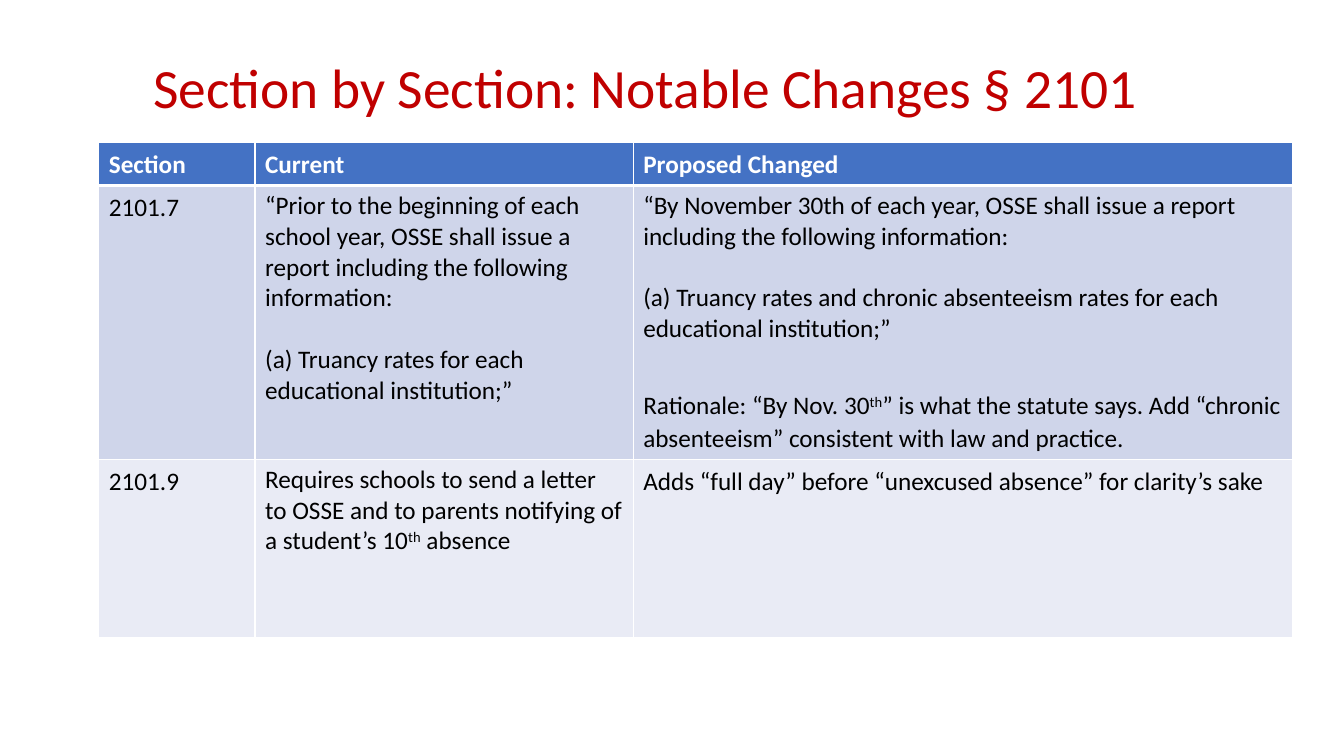
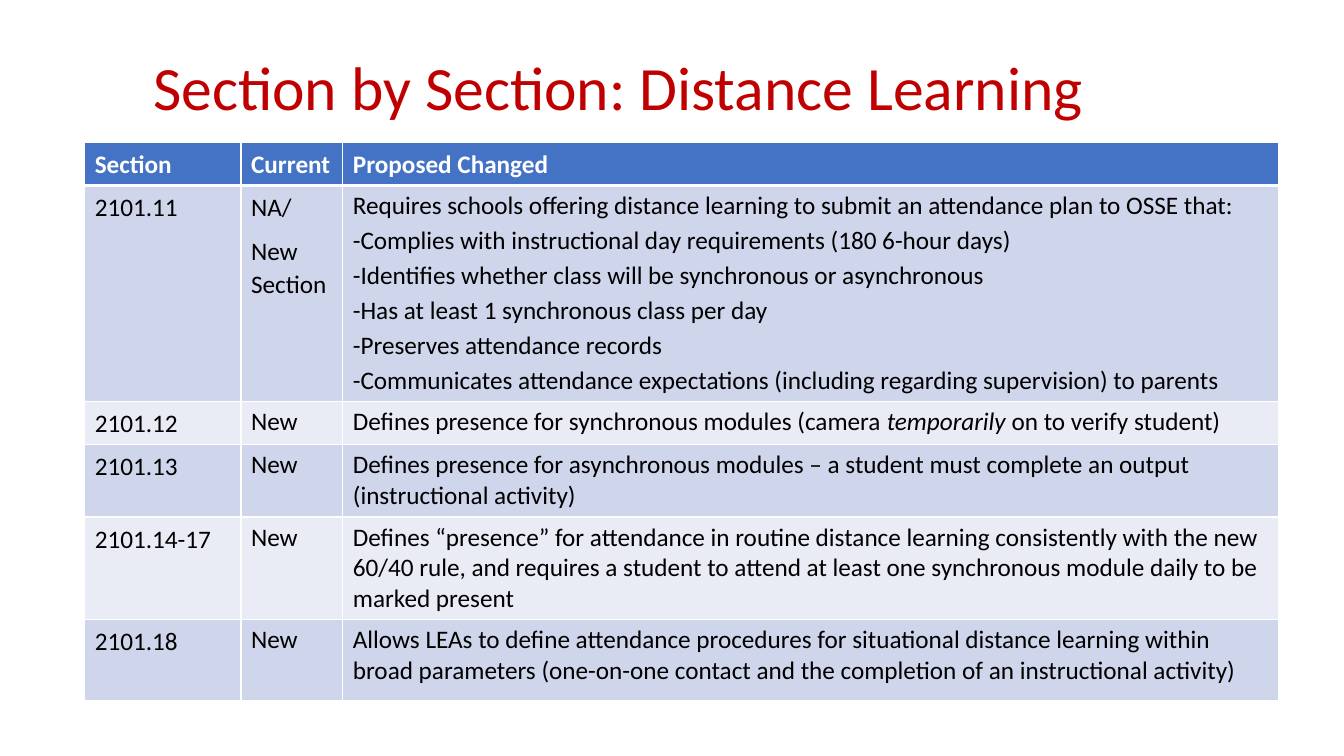
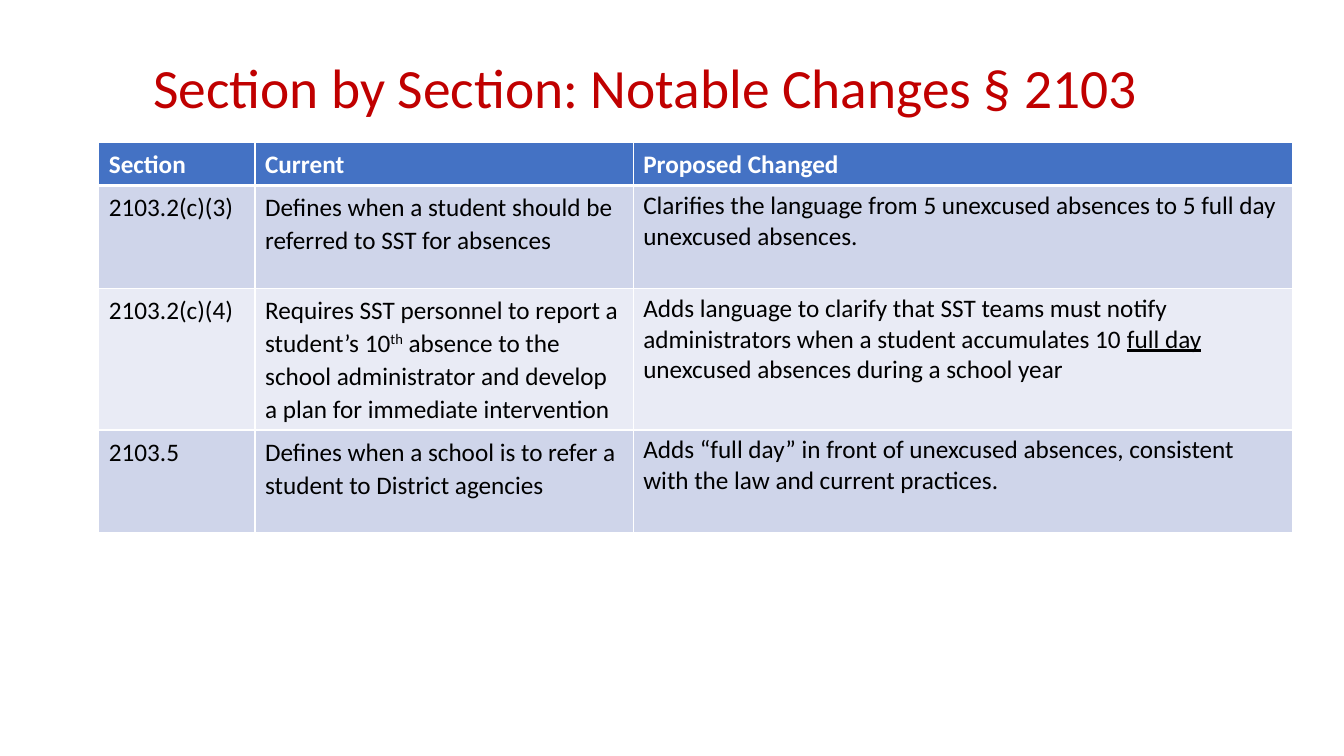
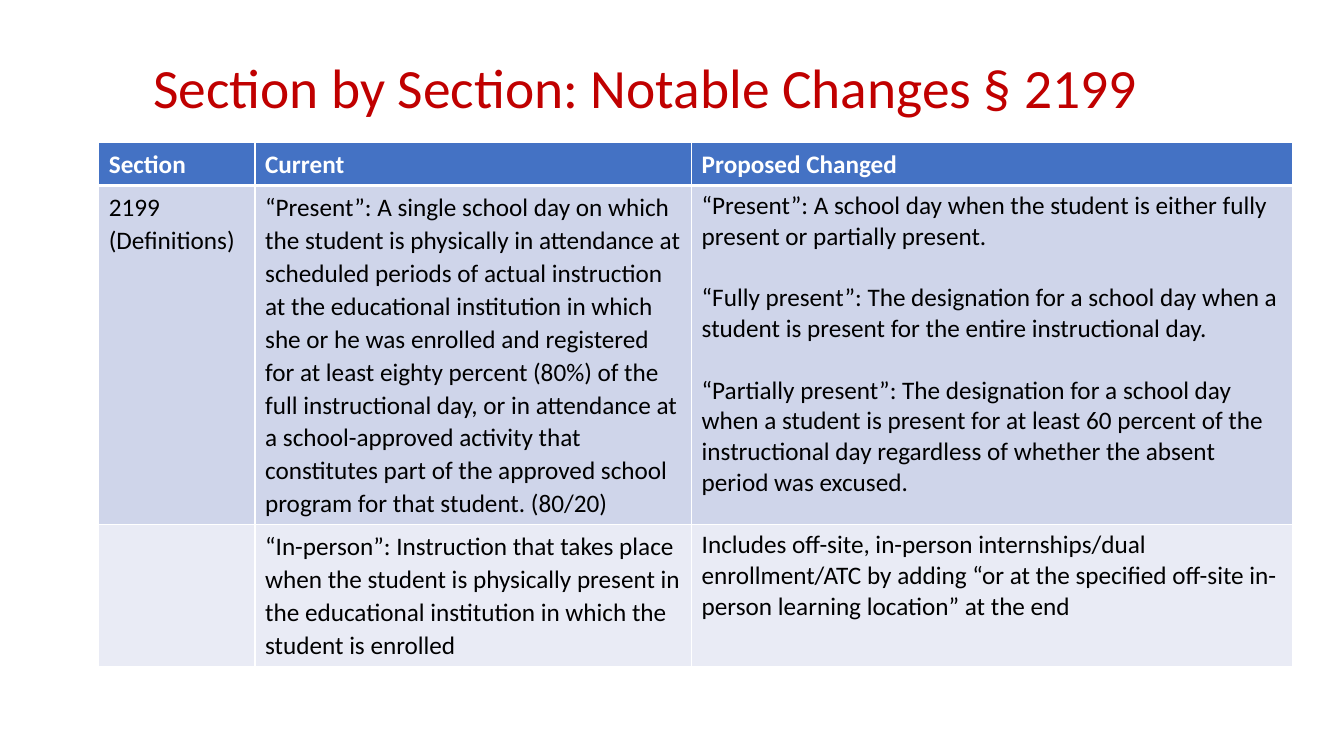
from dataclasses import dataclass

import lxml.etree
import pptx
import pptx.dml.color
import pptx.enum.text
import pptx.oxml.ns
import pptx.util

Inches, Pt = pptx.util.Inches, pptx.util.Pt
qn = pptx.oxml.ns.qn


# Shared look
@dataclass(frozen=True)
class Theme:
    font: str = "Calibri"
    red: str = "C00000"
    head: str = "4472C4"
    bands: tuple[str, str] = ("CFD5EA", "E9EBF5")
    white: str = "FFFFFF"
    black: str = "000000"
    title: float = 44
    small: float = 39.6
    body: float = 18
    thin: float = 1
    thick: float = 3


THEME = Theme()


# Content types
@dataclass(frozen=True)
class Run:
    text: str
    mark: str = ""  # "sup", "ital" or "under"


@dataclass(frozen=True)
class Para:
    runs: tuple[Run, ...]
    line: float = 1.0
    after: float = 0
    dash: bool = False


Cell = tuple[Para, ...]


@dataclass(frozen=True)
class Row:
    high: float
    cells: tuple[Cell, ...]


@dataclass(frozen=True)
class Page:
    title: str
    size: float
    left: float
    cols: tuple[float, ...]
    rows: tuple[Row, ...]


def runs(parts: tuple[str | Run, ...]) -> tuple[Run, ...]:
    return tuple(Run(part) if isinstance(part, str) else part for part in parts)


def loose(*parts: str | Run) -> Para:
    return Para(runs(parts), line=1.07, after=8)


def plain(*parts: str | Run, after: float = 0) -> Para:
    return Para(runs(parts), after=after)


def tight(*parts: str | Run, dash: bool = False) -> Para:
    return Para(runs(parts), after=3, dash=dash)


# Drawing
def rgb(code: str) -> pptx.dml.color.RGBColor:
    return pptx.dml.color.RGBColor.from_string(code)


def style(font, size: float, color: str, bold: bool = False) -> None:
    font.name, font.size, font.bold = THEME.font, Pt(size), bold
    font.color.rgb = rgb(color)


def add_dash(para) -> None:
    props = para._p.get_or_add_pPr()
    props.set("marL", "0")
    props.set("indent", "0")
    lxml.etree.SubElement(props, qn("a:buFont")).set("typeface", THEME.font)
    lxml.etree.SubElement(props, qn("a:buChar")).set("char", "-")


def add_run(para, item: Run) -> None:
    run = para.add_run()
    run.text = item.text
    if item.mark == "sup":
        run._r.get_or_add_rPr().set("baseline", "30000")
    elif item.mark == "ital":
        run.font.italic = True
    elif item.mark == "under":
        run.font.underline = True


def add_edges(cell, base: float) -> None:
    props = cell._tc.get_or_add_tcPr()
    for side in "LRTB":
        width = base if side == "B" else THEME.thin
        edge = lxml.etree.SubElement(props, qn(f"a:ln{side}"))
        edge.set("w", str(Pt(width)))
        fill = lxml.etree.SubElement(edge, qn("a:solidFill"))
        lxml.etree.SubElement(fill, qn("a:srgbClr")).set("val", THEME.white)


def fill_cell(cell, paras: Cell, back: str, ink: str, head: bool) -> None:
    add_edges(cell, THEME.thick if head else THEME.thin)
    cell.fill.solid()
    cell.fill.fore_color.rgb = rgb(back)
    frame = cell.text_frame
    for i, item in enumerate(paras):
        para = frame.add_paragraph() if i else frame.paragraphs[0]
        para.line_spacing = item.line
        para.space_after = Pt(item.after)
        if item.dash:
            add_dash(para)
        style(para.font, THEME.body, ink, head)
        for part in item.runs:
            add_run(para, part)


def add_title(slide, page: Page) -> None:
    title = slide.shapes.title
    title.left, title.top = Inches(1.42), Inches(0.38)
    title.width, title.height = Inches(10.5), Inches(1.03)
    frame = title.text_frame
    frame.text = page.title
    frame.word_wrap = True
    frame.auto_size = pptx.enum.text.MSO_AUTO_SIZE.NONE
    frame.vertical_anchor = pptx.enum.text.MSO_ANCHOR.MIDDLE
    para = frame.paragraphs[0]
    para.alignment = pptx.enum.text.PP_ALIGN.LEFT
    para.line_spacing = 0.9
    style(para.font, page.size, THEME.red)


def add_grid(slide, page: Page) -> None:
    rows = (HEAD, *page.rows)
    wide, high = sum(page.cols), sum(row.high for row in rows)
    grid = slide.shapes.add_table(
        len(rows), len(page.cols),
        Inches(page.left), Inches(1.41), Inches(wide), Inches(high),
    ).table
    for col, width in zip(grid.columns, page.cols):
        col.width = Inches(width)
    for i, row in enumerate(rows):
        grid.rows[i].height = Inches(row.high)
        head = i == 0
        back = THEME.head if head else THEME.bands[(i - 1) % 2]
        ink = THEME.white if head else THEME.black
        for j, paras in enumerate(row.cells):
            fill_cell(grid.cell(i, j), paras, back, ink, head)


# Content
HEAD = Row(0.43, ((loose("Section"),), (loose("Current"),), (loose("Proposed Changed"),)))
TH = Run("th", "sup")
LINE = 22  # height of one line of body text, in points
COLS = (1.55, 3.75, 6.54)

PAGES = (
    Page("Section by Section: Notable Changes § 2101", THEME.small, 0.98, COLS, (
        Row(2.71, (
            (loose("2101.7"),),
            (
                plain("“Prior to the beginning of each school year, OSSE shall issue a "
                      "report including the following information:", after=LINE),
                plain("(a) Truancy rates for each educational institution;”"),
            ),
            (
                plain("“By November 30th of each year, OSSE shall issue a report "
                      "including the following information:", after=LINE),
                plain("(a) Truancy rates and chronic absenteeism rates for each "
                      "educational institution;”", after=31.5),
                loose("Rationale: “By Nov. 30", TH, "” is what the statute says. Add "
                      "“chronic absenteeism” consistent with law and practice."),
            ),
        )),
        Row(1.77, (
            (loose("2101.9"),),
            (plain("Requires schools to send a letter to OSSE and to parents notifying "
                   "of a student’s 10", TH, " absence"),),
            (loose("Adds “full day” before “unexcused absence” for clarity’s sake"),),
        )),
    )),
    Page("Section by Section: Distance Learning", THEME.title, 0.84, (1.55, 1.01, 9.28), (
        Row(2.14, (
            (loose("2101.11"),),
            (loose("NA/"), loose("New Section")),
            (
                tight("Requires schools offering distance learning to submit an "
                      "attendance plan to OSSE that:"),
                *(tight(text, dash=True) for text in (
                    "Complies with instructional day requirements (180 6-hour days)",
                    "Identifies whether class will be synchronous or asynchronous",
                    "Has at least 1 synchronous class per day",
                    "Preserves attendance records",
                    "Communicates attendance expectations (including regarding "
                    "supervision) to parents",
                )),
            ),
        )),
        Row(0.43, (
            (loose("2101.12"),),
            (plain("New"),),
            (tight("Defines presence for synchronous modules (camera ",
                   Run("temporarily", "ital"), " on to verify student)"),),
        )),
        Row(0.72, (
            (loose("2101.13"),),
            (plain("New"),),
            (tight("Defines presence for asynchronous modules – a student must complete "
                   "an output (instructional activity)"),),
        )),
        Row(1.02, (
            (loose("2101.14-17"),),
            (plain("New"),),
            (tight("Defines “presence” for attendance in routine distance learning "
                   "consistently with the new 60/40 rule, and requires a student to "
                   "attend at least one synchronous module daily to be marked present"),),
        )),
        Row(0.8, (
            (loose("2101.18"),),
            (plain("New"),),
            (tight("Allows LEAs to define attendance procedures for situational distance "
                   "learning within broad parameters (one-on-one contact and the "
                   "completion of an instructional activity)"),),
        )),
    )),
    Page("Section by Section: Notable Changes § 2103", THEME.small, 0.98, COLS, (
        Row(1.02, (
            (loose("2103.2(c)(3)"),),
            (loose("Defines when a student should be referred to SST for absences"),),
            (tight("Clarifies the language from 5 unexcused absences to 5 full day "
                   "unexcused absences."),),
        )),
        Row(1.4, (
            (loose("2103.2(c)(4)"),),
            (loose("Requires SST personnel to report a student’s 10", TH, " absence to "
                   "the school administrator and develop a plan for immediate "
                   "intervention"),),
            (tight("Adds language to clarify that SST teams must notify administrators "
                   "when a student accumulates 10 ", Run("full day", "under"),
                   " unexcused absences during a school year"),),
        )),
        Row(1.02, (
            (loose("2103.5"),),
            (loose("Defines when a school is to refer a student to District agencies"),),
            (tight("Adds “full day” in front of unexcused absences, consistent with the "
                   "law and current practices."),),
        )),
    )),
    Page("Section by Section: Notable Changes § 2199", THEME.small, 0.98, (1.55, 4.33, 5.96), (
        Row(3.36, (
            (loose("2199 (Definitions)"),),
            (loose("“Present”: A single school day on which the student is physically in "
                   "attendance at scheduled periods of actual instruction at the "
                   "educational institution in which she or he was enrolled and "
                   "registered for at least eighty percent (80%) of the full "
                   "instructional day, or in attendance at a school-approved activity "
                   "that constitutes part of the approved school program for that "
                   "student. (80/20)"),),
            (
                plain("“Present”: A school day when the student is either fully present "
                      "or partially present.", after=LINE),
                plain("“Fully present”: The designation for a school day when a student "
                      "is present for the entire instructional day.", after=LINE),
                plain("“Partially present”: The designation for a school day when a "
                      "student is present for at least 60 percent of the instructional "
                      "day regardless of whether the absent period was excused."),
            ),
        )),
        Row(1.4, (
            (),
            (loose("“In-person”: Instruction that takes place when the student is "
                   "physically present in the educational institution in which the "
                   "student is enrolled"),),
            (tight("Includes off-site, in-person internships/dual enrollment/ATC by "
                   "adding “or at the specified off-site in-person learning location” "
                   "at the end"),),
        )),
    )),
)


def main() -> None:
    deck = pptx.Presentation()
    deck.slide_width, deck.slide_height = Inches(13.33), Inches(7.5)
    for page in PAGES:
        slide = deck.slides.add_slide(deck.slide_layouts[5])
        add_title(slide, page)
        add_grid(slide, page)
    deck.save("out.pptx")


if __name__ == "__main__":
    main()
